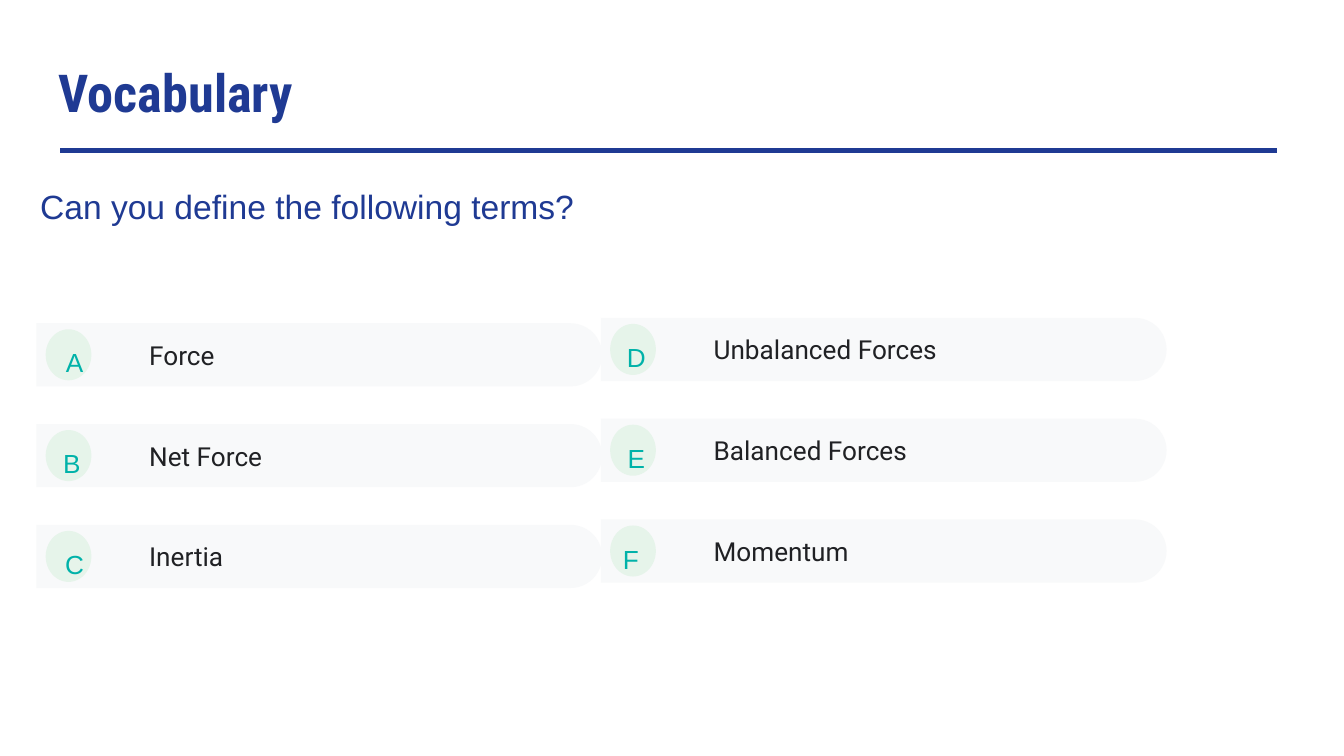
from pptx import Presentation
from pptx.dml.color import RGBColor
from pptx.enum.shapes import MSO_CONNECTOR, MSO_SHAPE
from pptx.enum.text import MSO_ANCHOR, PP_ALIGN
from pptx.oxml.ns import qn
from pptx.util import Inches, Pt
from lxml.etree import SubElement

NAVY = RGBColor(0x1F, 0x3A, 0x93)
TEAL = RGBColor(0x00, 0xB2, 0xA9)
MINT = RGBColor(0xE6, 0xF4, 0xEA)
PALE = RGBColor(0xF8, 0xF9, 0xFA)
INK = RGBColor(0x20, 0x21, 0x24)

# Each term: letter, offset of the letter from its badge, word
COLUMNS = [
    (0.34, 2.45, [("A", 0.13, "Force"), ("B", 0.11, "Net Force"), ("C", 0.13, "Inertia")]),
    (4.54, 2.41, [("D", 0.11, "Unbalanced Forces"), ("E", 0.11, "Balanced Forces"),
                  ("F", 0.07, "Momentum")]),
]
ROW_PITCH = 0.75
BAR_LENGTH, BAR_HEIGHT = 4.21, 0.47
BADGE_WIDTH, BADGE_HEIGHT = 0.34, 0.38


class VocabularySlide:
    def __init__(self, page):
        self.page = page

    def text(self, words, left, top, width, height, size, font, color, inset=0,
             bold=False, align=PP_ALIGN.LEFT, anchor=MSO_ANCHOR.TOP):
        box = self.page.shapes.add_textbox(
            Inches(left), Inches(top), Inches(width), Inches(height))
        frame = box.text_frame
        frame.word_wrap = True
        frame.vertical_anchor = anchor
        frame.margin_left = frame.margin_right = Inches(inset)
        frame.margin_top = frame.margin_bottom = Inches(inset)
        para = frame.paragraphs[0]
        para.text = words
        para.alignment = align
        para.font.size = Pt(size)
        para.font.name = font
        para.font.bold = bold
        para.font.color.rgb = color

    def rule(self, left, right, y):
        line = self.page.shapes.add_connector(
            MSO_CONNECTOR.STRAIGHT, Inches(left), Inches(y), Inches(right), Inches(y))
        line.line.color.rgb = NAVY
        line.line.width = Pt(2.25)
        SubElement(line.element.spPr, qn("a:effectLst"))

    def shape(self, kind, left, top, width, height, fill):
        shape = self.page.shapes.add_shape(
            kind, Inches(left), Inches(top), Inches(width), Inches(height))
        shape.shadow.inherit = False
        shape.fill.solid()
        shape.fill.fore_color.rgb = fill
        shape.line.fill.background()
        return shape

    def bar(self, left, middle):
        """Draw a bar rounded at its right end: an upright shape turned on its side."""
        center = left + BAR_LENGTH / 2
        bar = self.shape(MSO_SHAPE.ROUND_2_SAME_RECTANGLE, center - BAR_HEIGHT / 2,
                         middle - BAR_LENGTH / 2, BAR_HEIGHT, BAR_LENGTH, PALE)
        bar.adjustments[0] = 0
        bar.adjustments[1] = 0.5
        bar.rotation = 270

    def term(self, letter, offset, word, left, top):
        self.bar(left - 0.07, top + BADGE_HEIGHT / 2)
        self.shape(MSO_SHAPE.OVAL, left, top, BADGE_WIDTH, BADGE_HEIGHT, MINT)
        self.text(word, left + 0.77, top, 2.87, BADGE_HEIGHT, 14, "Roboto", INK,
                  anchor=MSO_ANCHOR.MIDDLE)
        self.text(letter, left + offset, top + 0.13, 0.17, 0.23, 14, "Arial", TEAL,
                  align=PP_ALIGN.CENTER)


def main():
    deck = Presentation()
    deck.slide_width = Inches(10)
    deck.slide_height = deck.slide_width * 9 // 16
    slide = VocabularySlide(deck.slides.add_slide(deck.slide_layouts[6]))
    slide.text("Vocabulary", 0.34, 0.35, 9.32, 0.63, 28, "Roboto Condensed", NAVY,
               inset=0.1, bold=True)
    slide.rule(0.45, 9.5, 1.12)
    slide.text("Can you define the following terms?", 0.2, 1.28, 7.01, 0.5, 18,
               "Arial", NAVY, inset=0.1)
    for left, top, terms in COLUMNS:
        for row, (letter, offset, word) in enumerate(terms):
            slide.term(letter, offset, word, left, top + row * ROW_PITCH)
    deck.save("out.pptx")


if __name__ == "__main__":
    main()
